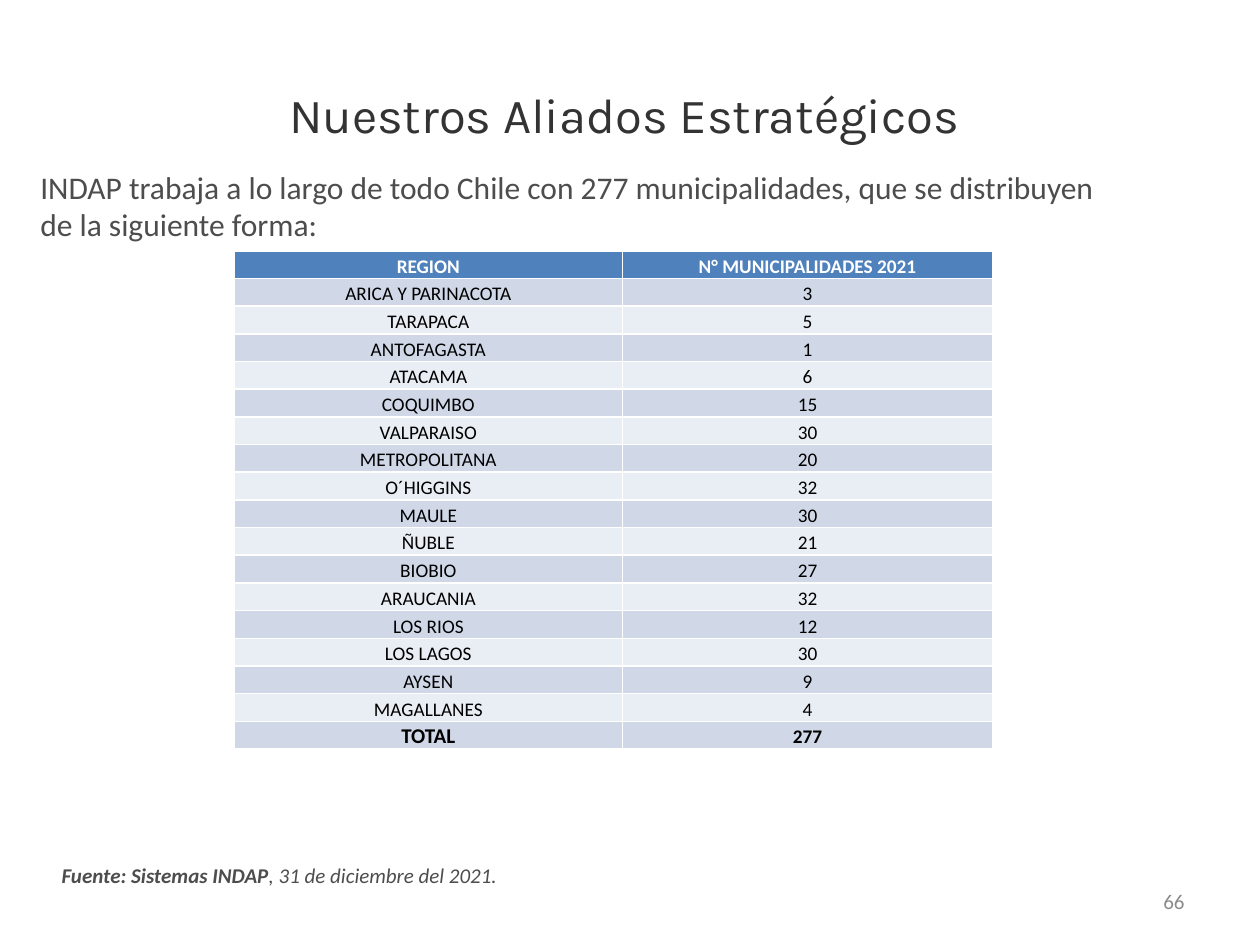
"""Build a slide listing the allied municipalities of each region."""
from typing import NamedTuple

import lxml.etree
import pptx
import pptx.dml.color
import pptx.enum.text
import pptx.oxml.ns
import pptx.util

Inches = pptx.util.Inches
ALIGN = pptx.enum.text.PP_ALIGN
ANCHOR = pptx.enum.text.MSO_ANCHOR

COLORS = {
    "title": "333333",
    "text": "4D4D4D",
    "number": "8C8C8C",
    "header": "4F81BD",
    "odd": "D0D8E8",
    "even": "E9EDF4",
    "white": "FFFFFF",
    "black": "000000",
}


class Region(NamedTuple):
    name: str
    count: int


REGIONS = [
    Region("ARICA Y PARINACOTA", 3),
    Region("TARAPACA", 5),
    Region("ANTOFAGASTA", 1),
    Region("ATACAMA", 6),
    Region("COQUIMBO", 15),
    Region("VALPARAISO", 30),
    Region("METROPOLITANA", 20),
    Region("O´HIGGINS", 32),
    Region("MAULE", 30),
    Region("ÑUBLE", 21),
    Region("BIOBIO", 27),
    Region("ARAUCANIA", 32),
    Region("LOS RIOS", 12),
    Region("LOS LAGOS", 30),
    Region("AYSEN", 9),
    Region("MAGALLANES", 4),
]


def rgb(color: str) -> pptx.dml.color.RGBColor:
    return pptx.dml.color.RGBColor.from_string(COLORS[color])


def style(r, size: float, color: str, bold: bool = False, italic: bool = False,
          font: str = "Calibri") -> None:
    r.font.name = font
    r.font.size = pptx.util.Pt(size)
    r.font.bold = bold
    r.font.italic = italic
    r.font.color.rgb = rgb(color)


def place(sp, left: float, top: float, width: float, height: float) -> None:
    sp.left, sp.top = Inches(left), Inches(top)
    sp.width, sp.height = Inches(width), Inches(height)


def add_title(slide) -> None:
    sp = slide.shapes.title
    place(sp, 0.5, 0.28, 9, 1.25)
    tf = sp.text_frame
    tf.text = "Nuestros Aliados Estratégicos "
    tf.auto_size = pptx.enum.text.MSO_AUTO_SIZE.NONE
    tf.vertical_anchor = ANCHOR.MIDDLE
    p = tf.paragraphs[0]
    p.alignment = ALIGN.CENTER
    style(p.runs[0], 28, "title", font="Karla")


def add_body(slide) -> None:
    sp = slide.placeholders[1]
    place(sp, 0.22, 1.28, 9.3, 5.42)
    tf = sp.text_frame
    tf.text = ("INDAP trabaja a lo largo de todo Chile con 277 municipalidades, "
               "que se distribuyen\nde la siguiente forma:")
    tf.auto_size = pptx.enum.text.MSO_AUTO_SIZE.NONE
    for p in tf.paragraphs:
        pPr = p._p.get_or_add_pPr()
        pPr.set("marL", "0")
        pPr.set("indent", "0")
        lxml.etree.SubElement(pPr, pptx.oxml.ns.qn("a:buNone"))
        p.alignment = ALIGN.JUSTIFY
        p.space_before = pptx.util.Pt(0)
        style(p.runs[0], 18, "text")


def fill_cell(cell, text: str, fill: str, size: float, color: str, bold: bool) -> None:
    cell.fill.solid()
    cell.fill.fore_color.rgb = rgb(fill)
    cell.margin_left = cell.margin_right = cell.margin_top = Inches(0.01)
    cell.margin_bottom = 0
    cell.vertical_anchor = ANCHOR.BOTTOM
    cell.text = text
    p = cell.text_frame.paragraphs[0]
    p.alignment = ALIGN.CENTER
    style(p.runs[0], size, color, bold)


def add_region_table(slide) -> None:
    total = Region("TOTAL", sum(region.count for region in REGIONS))
    rows = [("REGION", "N° MUNICIPALIDADES 2021"), *REGIONS, total]
    height = 0.22
    table = slide.shapes.add_table(len(rows), 2, Inches(1.86), Inches(1.99),
                                   Inches(6.02), Inches(height * len(rows))).table
    for column, width in zip(table.columns, (3.08, 2.94)):
        column.width = Inches(width)
    for i, row in enumerate(rows):
        table.rows[i].height = Inches(height)
        fill = "header" if i == 0 else "odd" if i % 2 else "even"
        color = "white" if i == 0 else "black"
        for j, value in enumerate(row):
            size = 12 if value == total.name else 11
            fill_cell(table.cell(i, j), str(value), fill, size, color,
                      bold=i in (0, len(rows) - 1))


def add_text_box(slide, left: float, top: float, width: float, height: float):
    tf = slide.shapes.add_textbox(Inches(left), Inches(top),
                                  Inches(width), Inches(height)).text_frame
    tf.word_wrap = True
    return tf


def add_source(slide) -> None:
    p = add_text_box(slide, 0.39, 6.8, 4.35, 0.3).paragraphs[0]
    for text, bold in (("Fuente: Sistemas INDAP", True),
                       (", 31 de diciembre del 2021.", False)):
        r = p.add_run()
        r.text = text
        style(r, 12, "text", bold, italic=True)


def add_page_number(slide) -> None:
    tf = add_text_box(slide, 7.17, 6.95, 2.33, 0.4)
    tf.text = "66"
    tf.vertical_anchor = ANCHOR.MIDDLE
    p = tf.paragraphs[0]
    p.alignment = ALIGN.RIGHT
    style(p.runs[0], 12, "number")


def main() -> None:
    prs = pptx.Presentation()
    prs.slide_width, prs.slide_height = Inches(10), Inches(7.5)
    slide = prs.slides.add_slide(prs.slide_layouts[1])
    add_title(slide)
    add_body(slide)
    add_source(slide)
    add_region_table(slide)
    add_page_number(slide)
    prs.save("out.pptx")


if __name__ == "__main__":
    main()
